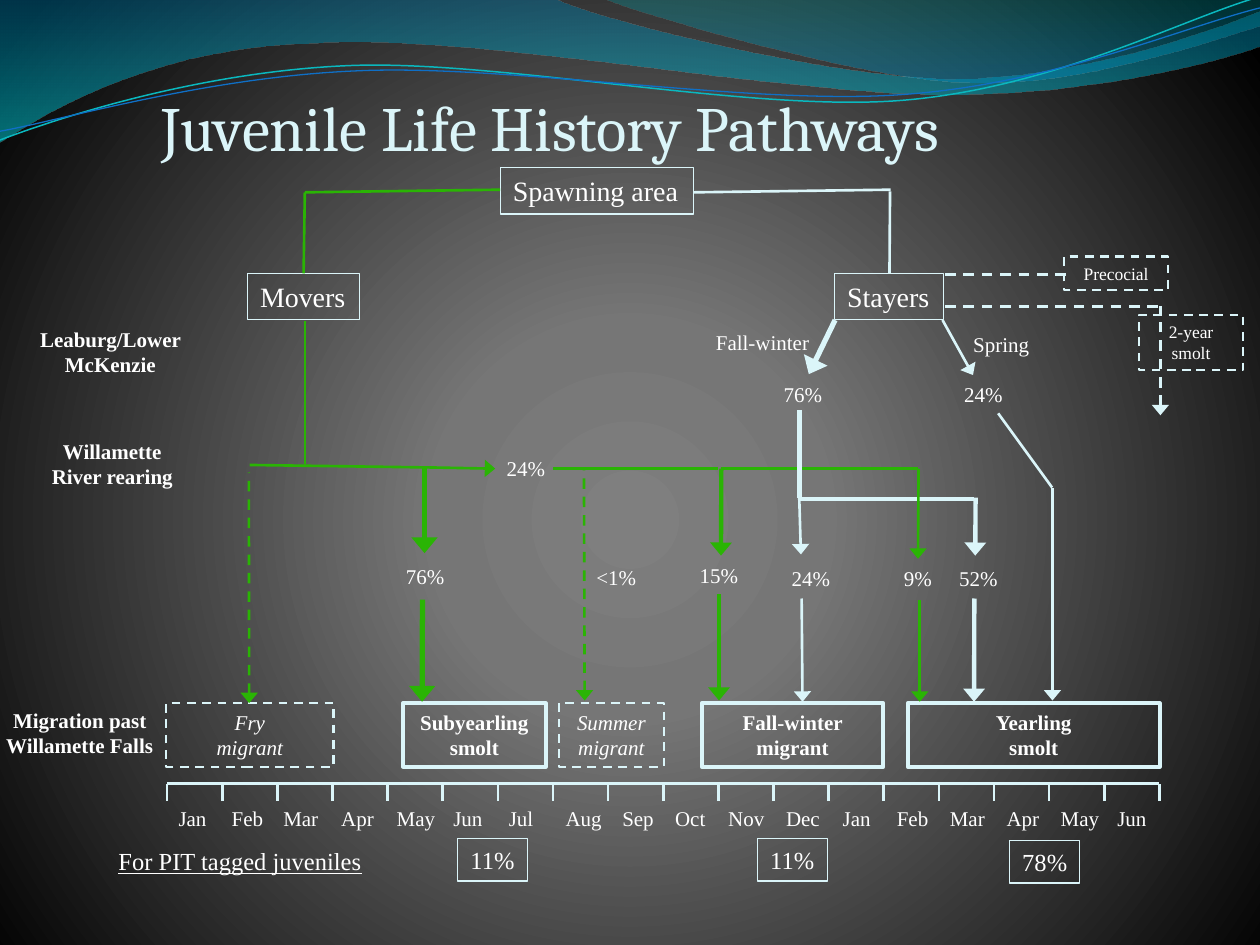
from pptx import Presentation
from pptx.util import Pt
from pptx.dml.color import RGBColor
from pptx.enum.dml import MSO_LINE
from pptx.enum.shapes import MSO_SHAPE, MSO_CONNECTOR
from pptx.enum.text import PP_ALIGN, MSO_ANCHOR, MSO_AUTO_SIZE
from pptx.oxml import parse_xml
from pptx.oxml.ns import qn, nsdecls
from lxml.etree import SubElement

COLORS = {"ice": "DBF5F9", "green": "2AB404", "white": "FFFFFF", "aqua": "0AB8BF",
          "blue": "0F6FC6", "deep": "0074A1", "teal": "00C6CF", "sea": "00A1A9", "sky": "008BBF",
          "gray": "7F7F7F", "dim": "767676", "black": "000000"}
BACKGROUND = [(0, "gray"), (25000, "dim"), (100000, "black")]
SERIF = "Times New Roman"
LEFT, CENTER = PP_ALIGN.LEFT, PP_ALIGN.CENTER

BANDS = [
    ([(0, 0), (317, -0.7), (343, 12, 478, 45, 546, 45), (614, 45, 690, 19, 720, 6.5),
      (721, 26), (708, 32, 626, 55, 537, 54), (448, 54, 275, 20, 185, 24.5),
      (93, 26, 33, 60, -0.7, 81.4), (0, 0)], ("deep", 45), ("teal", 55)),
    ([(345, -0.7), (366, 8, 491, 45, 554, 47), (616, 50, 692, 23, 720, 15), (720, 0),
      (345, -0.7)], ("sea", 30), ("sky", 45)),
]
WAVES = [
    ([(0, 80), (34.5, 67, 114, 41, 199.5, 37.5), (284.5, 34, 427, 64, 513.5, 57.5),
      (600, 51, 675.5, 11, 718.5, -1.5)], "aqua", 0.85),
    ([(0, 75), (34, 69, 118, 44, 204, 40.5), (290, 36.5, 430, 60.5, 516, 54),
      (602, 48, 677.5, 15, 720, 4.5)], "blue", 0.75),
]

MONTH_WIDTHS = {"Jan": 31, "Feb": 32.4, "Mar": 34.6, "Apr": 33.1, "May": 36.7, "Jun": 31.7,
                "Jul": 28.8, "Aug": 35.3, "Sep": 32.4, "Oct": 32.4, "Nov": 35.3, "Dec": 33.8}
MONTHS = [*MONTH_WIDTHS, *list(MONTH_WIDTHS)[:6]]
MONTH_LEFTS = [95, 125.3, 154.8, 187.9, 219.6, 252, 283.7, 316.1, 348.5, 378.7, 409, 442.1,
               474.5, 505.4, 535.7, 568.1, 599, 631.4]
AXIS_LEFT, AXIS_TOP, MONTH_STEP = 95.5, 447.8, 31.5

NODES = [("Spawning area", 286, 95.8, 110.2), ("Movers", 141.5, 156.2, 64.1),
         ("Stayers", 477, 156.2, 62.3)]
SHARES = [("11%", 261.4, 479.2), ("11%", 432.7, 479.2), ("78%", 577, 480.5)]
STAGES = [("Subyearling\nsmolt", 230.4, 81.4), ("Fall-winter migrant", 401, 103.8),
          ("Yearling\nsmolt", 518.7, 144)]
RARE_STAGES = [("Fry\nmigrant", 95, 95.6), ("Summer\nmigrant", 319.5, 59.8)]
SIDE_BRANCHES = [("Precocial", 607.9, 146.6, 59.8, 19.2), ("2-year\nsmolt", 650.7, 180, 59.8, 31.6)]

LABELS = [
    ("76%", 224.6, 318.4, 36.7), ("15%", 392.4, 318, 36.7), ("76%", 440.4, 214.6, 36.7),
    ("24%", 543.6, 214.6, 36.7), ("9%", 509, 319.7, 31), ("24%", 445, 319.7, 36.7),
    ("24%", 282.2, 257, 36.7), ("52%", 540.7, 319.7, 36.7), ("<1%", 333.4, 319, 37.4),
]
SEASONS = [("Fall-winter", 402, 185, 68.4), ("Spring", 549, 186, 46.8)]
REGIONS = [("Leaburg/Lower McKenzie", 12.7, 183, 100.8), ("Willamette River rearing", 18.5, 247, 91.4),
           ("Migration past Willamette Falls", -4.1, 400.5, 99.4)]

PLAIN = [
    ("green", 1.5, 174.2, 265, 174.2, 183.6), ("green", 1.5, 174.2, 109.9, 285.8, 108.4),
    ("green", 1.5, 173.5, 156.2, 174.2, 109.9), ("green", 1.5, 411.8, 267.8, 524.4, 267.8),
    ("green", 1.5, 142.6, 265.7, 242.6, 267.1), ("green", 1.5, 316.1, 267.8, 410.4, 267.8),
    ("ice", 1.5, 508.3, 156.2, 508.6, 109.4), ("ice", 1.5, 396.7, 109.9, 509, 108.4),
    ("ice", 3, 457, 284.4, 457, 234), ("ice", 2.5, 457, 285.1, 556.8, 285.1),
    ("ice", 1.5, 601.2, 278.6, 570.4, 236.2),
]
DASHED = [("ice", 1.5, 540, 175, 663.1, 175), ("ice", 1.5, 540, 157, 609.1, 157)]
ARROWS = [
    ("green", 3, 241.2, 401, 241.4, 342.7), ("green", 2.5, 410.9, 400.3, 410.9, 339.5),
    ("green", 2.5, 412, 317.5, 412.2, 267.8), ("green", 1.5, 525.6, 401, 525.6, 342.7),
    ("green", 1.5, 524.6, 319.3, 524.9, 267.8), ("green", 3, 242.6, 316.1, 242.6, 266.4),
    ("green", 1.5, 283, 267.8, 244.1, 267.1), ("ice", 3, 462.2, 213.8, 477.2, 182.9),
    ("ice", 1.5, 458.6, 401, 458.1, 342), ("ice", 1.5, 457.7, 316.8, 456.7, 283.7),
    ("ice", 2.5, 556.6, 401, 556.8, 342), ("ice", 1.5, 556, 214.3, 538.6, 182.9),
    ("ice", 1.5, 601.4, 400.3, 601.4, 278.6), ("ice", 2.5, 557.3, 317.5, 557.5, 284.4),
]
DASHED_ARROWS = [("green", 1.5, 142.4, 401.8, 142.2, 270), ("green", 1.5, 334.1, 400.3, 333.7, 268.6),
                 ("ice", 1.5, 663.1, 237.3, 663.1, 175)]


def rgb(name):
    return RGBColor.from_string(COLORS[name])


def set_background(slide):
    stops = "".join(f'<a:gs pos="{pos}"><a:srgbClr val="{COLORS[name]}"/></a:gs>'
                    for pos, name in BACKGROUND)
    slide.element.cSld.insert(0, parse_xml(
        f'<p:bg {nsdecls("p", "a")}><p:bgPr><a:gradFill><a:gsLst>{stops}</a:gsLst>'
        '<a:path path="circle"><a:fillToRect l="10000" t="110000" r="10000" b="100000"/></a:path>'
        '</a:gradFill><a:effectLst/></p:bgPr></p:bg>'))


def add_outline(slide, path):
    points = [(Pt(seg[i]), Pt(seg[i + 1])) for seg in path for i in range(0, len(seg), 2)]
    builder = slide.shapes.build_freeform(*points[0])
    builder.add_line_segments(points[1:], close=False)
    sp = builder.convert_to_shape()
    sp.shadow.inherit = False
    segments = iter(list(sp.element.spPr.iter(qn("a:lnTo"))))
    for seg in path[1:]:
        first = next(segments)
        if len(seg) == 6:
            first.tag = qn("a:cubicBezTo")
            for _ in range(2):
                line = next(segments)
                first.append(line[0])
                line.getparent().remove(line)
    return sp


def add_band(slide, path, *stops):
    sp = add_outline(slide, path)
    sp.line.fill.background()
    sp.fill.gradient()
    sp.fill.gradient_angle = 270
    for stop, (color, opacity) in zip(sp.fill.gradient_stops, stops):
        stop.color.rgb = rgb(color)
    for clr, (color, opacity) in zip(sp.element.spPr.iter(qn("a:srgbClr")), stops):
        SubElement(clr, qn("a:alpha")).set("val", str(opacity * 1000))


def add_wave(slide, path, color, width):
    sp = add_outline(slide, path)
    sp.fill.background()
    sp.line.color.rgb = rgb(color)
    sp.line.width = Pt(width)


def write(sp, text, size, wrap=False, align=CENTER, font=SERIF, color="white", **style):
    tf = sp.text_frame
    tf.text = text
    tf.word_wrap = wrap
    tf.auto_size = MSO_AUTO_SIZE.SHAPE_TO_FIT_TEXT
    tf.vertical_anchor = MSO_ANCHOR.TOP
    for p in tf.paragraphs:
        p.alignment = align
        for r in p.runs:
            r.font.name, r.font.size = font, Pt(size)
            r.font.color.rgb = rgb(color)
            for name, value in style.items():
                setattr(r.font, name, value)
    return tf


def add_label(slide, text, x, y, w, h=21.6, size=12, **style):
    sp = slide.shapes.add_textbox(Pt(x), Pt(y), Pt(w), Pt(h))
    return write(sp, text, size, **style)


def add_box(slide, text, x, y, w, h, size, width=0.75, dashed=False, **style):
    sp = slide.shapes.add_shape(MSO_SHAPE.RECTANGLE, Pt(x), Pt(y), Pt(w), Pt(h))
    sp.shadow.inherit = False
    sp.fill.background()
    sp.line.color.rgb = rgb("ice")
    sp.line.width = Pt(width)
    if dashed:
        sp.line.dash_style = MSO_LINE.DASH
    write(sp, text, size, **style)


def add_line(slide, color, width, x1, y1, x2, y2, dashed=False, arrow=False):
    cn = slide.shapes.add_connector(MSO_CONNECTOR.STRAIGHT, Pt(x1), Pt(y1), Pt(x2), Pt(y2))
    cn.line.color.rgb = rgb(color)
    cn.line.width = Pt(width)
    if dashed:
        cn.line.dash_style = MSO_LINE.DASH
    if arrow:
        head = SubElement(cn.element.spPr.find(qn("a:ln")), qn("a:headEnd"))
        head.set("type", "triangle")
        head.set("w", "lg")
    SubElement(cn.element.spPr, qn("a:effectLst"))


def add_month_axis(slide):
    right = AXIS_LEFT + len(MONTHS) * MONTH_STEP
    add_line(slide, "ice", 1.75, right, AXIS_TOP, AXIS_LEFT, AXIS_TOP)
    for i in range(len(MONTHS) + 1):
        x = AXIS_LEFT + i * MONTH_STEP
        add_line(slide, "ice", 1.5, x, AXIS_TOP + 10, x, AXIS_TOP)
    for month, x in zip(MONTHS, MONTH_LEFTS):
        add_label(slide, month, x, 456.9, MONTH_WIDTHS[month], align=LEFT)


def main():
    prs = Presentation()
    prs.slide_width, prs.slide_height = Pt(720), Pt(540)
    slide = prs.slides.add_slide(prs.slide_layouts[6])
    set_background(slide)
    for band in BANDS:
        add_band(slide, *band)
    for wave in WAVES:
        add_wave(slide, *wave)
    add_month_axis(slide)
    for node in NODES:
        add_box(slide, *node, 26.6, 16, align=LEFT)
    for share in SHARES:
        add_box(slide, *share, 40, 24.2, 14)
    for text, x, w in STAGES:
        add_box(slide, text, x, 401.8, w, 36.4, 12, width=2.25, wrap=True, bold=True)
    for text, x, w in RARE_STAGES:
        add_box(slide, text, x, 401.8, w, 36.4, 12, width=1.25, dashed=True, wrap=True, italic=True)
    for branch in SIDE_BRANCHES:
        add_box(slide, *branch, 10, width=1.25, dashed=True, wrap=True)
    for lines, dashed, arrow in ((PLAIN, False, False), (DASHED, True, False),
                                 (ARROWS, False, True), (DASHED_ARROWS, True, True)):
        for line in lines:
            add_line(slide, *line, dashed=dashed, arrow=arrow)
    for label in LABELS:
        add_label(slide, *label)
    for season in SEASONS:
        add_label(slide, *season, align=LEFT)
    for region in REGIONS:
        add_label(slide, *region, h=36.4, wrap=True, bold=True)
    add_label(slide, "For PIT tagged juveniles", 58.3, 480.2, 157.7, 24.2, 14, underline=True)
    tf = add_label(slide, "Juvenile Life History Pathways", 92.2, 39.2, 545.8, 54.7, 36,
                   wrap=True, align=LEFT, font="Cambria", color="ice")
    tf.auto_size = MSO_AUTO_SIZE.NONE
    tf.vertical_anchor = MSO_ANCHOR.BOTTOM
    tf.margin_left = tf.margin_right = tf.margin_bottom = 0
    prs.save("out.pptx")


if __name__ == "__main__":
    main()
